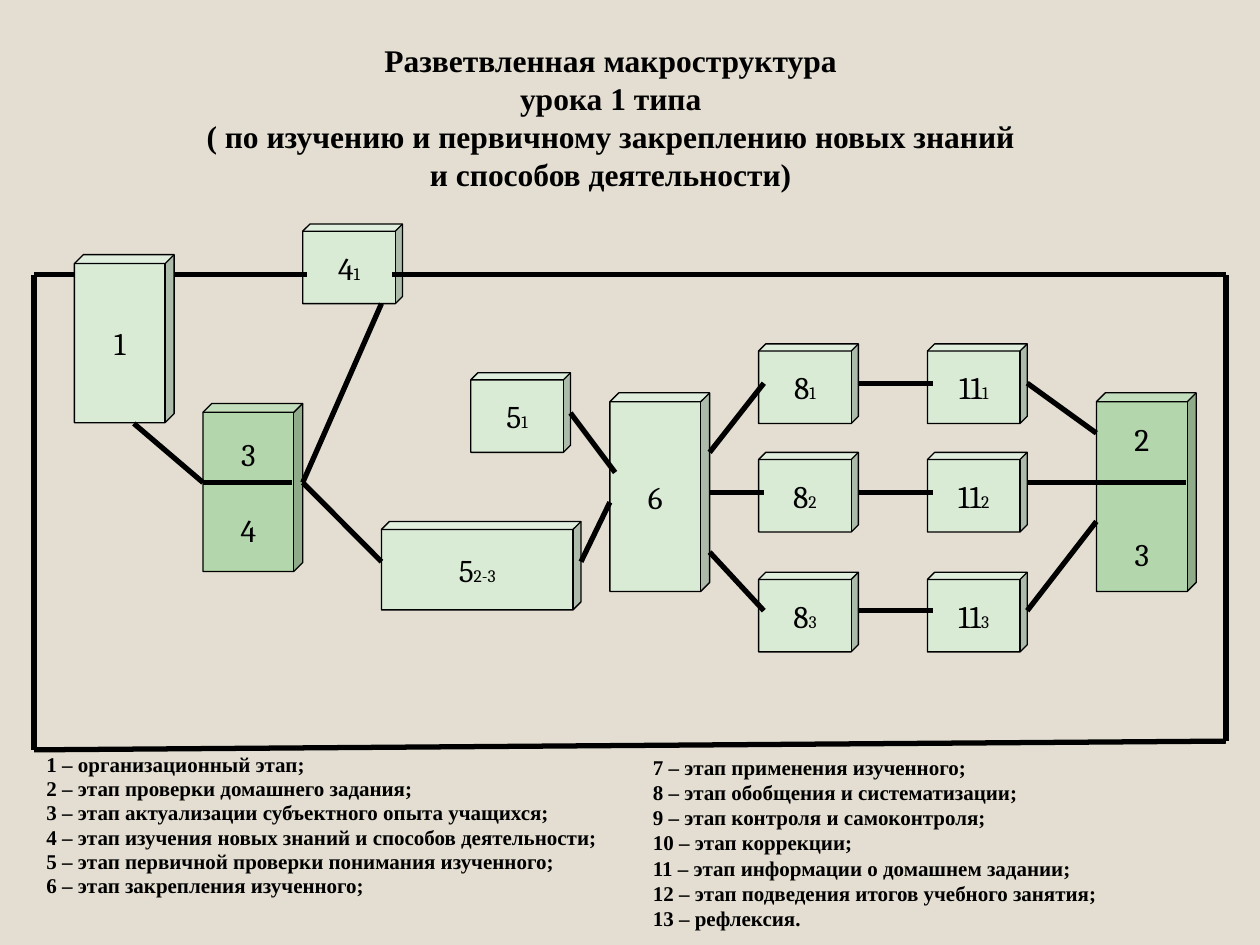
from dataclasses import dataclass

from lxml import etree
from pptx import Presentation
from pptx import util as u
from pptx.dml.color import RGBColor
from pptx.enum import shapes, text
from pptx.oxml.ns import qn

Pt = u.Pt


@dataclass(frozen=True)
class Theme:
    back: RGBColor = RGBColor.from_string("E3DED1")
    pale: RGBColor = RGBColor.from_string("D9EAD5")
    green: RGBColor = RGBColor.from_string("B3D6AC")
    ink: RGBColor = RGBColor.from_string("000000")
    serif: str = "Times New Roman"
    label: str = "Cambria"
    big: float = 18
    legend: float = 12
    index: float = 10
    thin: float = 0.75
    thick: float = 3


T = Theme()

TITLE = [
    "Разветвленная макроструктура",
    "урока 1 типа",
    "( по изучению и первичному закреплению новых знаний",
    "и способов деятельности)",
]
LEGEND_LEFT = [
    "1 – организационный этап;",
    "2 – этап проверки домашнего задания;",
    "3 – этап актуализации субъектного опыта учащихся;",
    "4 – этап изучения новых знаний и способов деятельности;",
    "5 – этап первичной проверки понимания изученного;",
    "6 – этап закрепления изученного;",
]
LEGEND_RIGHT = [
    "7 – этап применения изученного;",
    "8 – этап обобщения и систематизации;",
    "9 – этап контроля и самоконтроля;",
    "10 – этап коррекции;",
    "11 – этап информации о домашнем задании;",
    "12 – этап подведения итогов учебного занятия;",
    "13 – рефлексия.",
]

CUBE_W, CUBE_H = 57, 45.5
ROWS = [196.5, 258.5, 327]
ROW_MIDS = [219, 281.5, 349]
COL_8, COL_11 = 433.5, 530
LEFT, RIGHT, TOP = 19.5, 700.5, 157
AXIS = 275.75

CUBES = [
    (42.5, 145.5, CUBE_W, 96, "1", ""),
    (218, 298, 114, 50.5, "5", "2-3"),
    (348.5, 224.5, CUBE_W, 113.5, "6", ""),
    (173, 128, CUBE_W, CUBE_H, "4", "1"),
    (269, 213, CUBE_W, CUBE_H, "5", "1"),
]
LINES = [
    (LEFT, 428.5, RIGHT, 423.5),
    (LEFT, 428.5, LEFT, TOP),
    (RIGHT, TOP, RIGHT, 423.5),
    (LEFT, TOP, 42.5, TOP),
    (99.5, TOP, 175.5, TOP),
    (224, TOP, RIGHT, TOP),
    (76.5, 242, 116, AXIS),
    (173, AXIS, 218, 321),
    (173, AXIS, 218, 173.5),
    (332, 321, 348.5, 287),
    (326, 236, 351.5, 270),
    (405.5, 258.5, 436.5, ROW_MIDS[0]),
    (405.5, ROW_MIDS[1], 436.5, ROW_MIDS[1]),
    (405.5, 315.5, 436.5, ROW_MIDS[2]),
    (587, ROW_MIDS[0], 626.5, 247.5),
    (587, AXIS, 629.5, AXIS),
    (587, ROW_MIDS[2], 626.5, 298),
    (116, AXIS, 167, AXIS),
    (626.5, AXIS, 677.5, AXIS),
]


def style(r, font, size, bold=False):
    r.font.name = font
    r.font.size = Pt(size)
    r.font.bold = bold
    r.font.color.rgb = T.ink


def add_title(slide):
    sp = slide.shapes.title
    sp.left, sp.top, sp.width, sp.height = Pt(57), Pt(37.5), Pt(584), Pt(73.5)
    tf = sp.text_frame
    tf.text = "\v".join(TITLE)
    tf.word_wrap = True
    tf.auto_size = text.MSO_AUTO_SIZE.NONE
    tf.vertical_anchor = text.MSO_ANCHOR.BOTTOM
    tf.margin_bottom = Pt(1)
    p = tf.paragraphs[0]
    p.alignment = text.PP_ALIGN.CENTER
    for r in p.runs:
        style(r, T.serif, T.big, True)


def add_cube(slide, x, y, w, h, fill):
    sp = slide.shapes.add_shape(shapes.MSO_SHAPE.CUBE, Pt(x), Pt(y), Pt(w), Pt(h))
    sp.adjustments[0] = 0.09
    sp.shadow.inherit = False
    sp.fill.solid()
    sp.fill.fore_color.rgb = fill
    sp.line.color.rgb = T.ink
    sp.line.width = Pt(T.thin)
    tf = sp.text_frame
    tf.word_wrap = False
    tf.vertical_anchor = text.MSO_ANCHOR.MIDDLE
    return tf


def add_label(p, number, index=""):
    p.alignment = text.PP_ALIGN.CENTER
    for part, size in ((number, T.big), (index, T.index)):
        if part:
            r = p.add_run()
            r.text = part
            style(r, T.label, size)


def add_stage(slide, x, y, w, h, number, index):
    tf = add_cube(slide, x, y, w, h, T.pale)
    add_label(tf.paragraphs[0], number, index)


def add_double_stage(slide, x, y, h, upper, lower, gap):
    tf = add_cube(slide, x, y, CUBE_W, h, T.green)
    add_label(tf.paragraphs[0], upper)
    p = tf.add_paragraph()
    p.space_before = Pt(gap)
    add_label(p, lower)


def add_line(slide, x1, y1, x2, y2):
    c = slide.shapes.add_connector(
        shapes.MSO_CONNECTOR.STRAIGHT, Pt(x1), Pt(y1), Pt(x2), Pt(y2))
    c.line.color.rgb = T.ink
    c.line.width = Pt(T.thick)
    etree.SubElement(c.element.spPr, qn("a:effectLst"))


def add_legend(slide, x, y, w, h, items, spacing=1.0, before=0, hanging=0):
    tf = slide.shapes.add_textbox(Pt(x), Pt(y), Pt(w), Pt(h)).text_frame
    tf.word_wrap = True
    tf.text = "\n".join(items)
    for p in tf.paragraphs:
        p.line_spacing = spacing
        p.space_before = Pt(before)
        if hanging:
            pPr = p._p.get_or_add_pPr()
            pPr.set("marL", str(Pt(hanging)))
            pPr.set("indent", str(-Pt(hanging)))
        style(p.runs[0], T.serif, T.legend, True)


def main():
    prs = Presentation()
    prs.slide_width, prs.slide_height = Pt(720), Pt(540)
    s = prs.slides.add_slide(prs.slide_layouts[5])
    s.background.fill.solid()
    s.background.fill.fore_color.rgb = T.back

    add_title(s)
    for cube in CUBES:
        add_stage(s, *cube)
    for x, number in ((COL_8, "8"), (COL_11, "11")):
        for i, y in enumerate(ROWS, 1):
            add_stage(s, x, y, CUBE_W, CUBE_H, number, str(i))
    add_double_stage(s, 116, 230.5, 96, "3", "4", 22)
    add_double_stage(s, 626.5, 224.5, 113.5, "2", "3", 44)

    for line in LINES:
        add_line(s, *line)
    for y in ROW_MIDS:
        add_line(s, 490.5, y, 533, y)

    add_legend(s, 19.5, 428.5, 340.5, 96.5, LEGEND_LEFT, 0.8, 2.4, 27.5)
    add_legend(s, 366, 427.5, 279.5, 108.5, LEGEND_RIGHT)
    prs.save("out.pptx")


if __name__ == "__main__":
    main()
